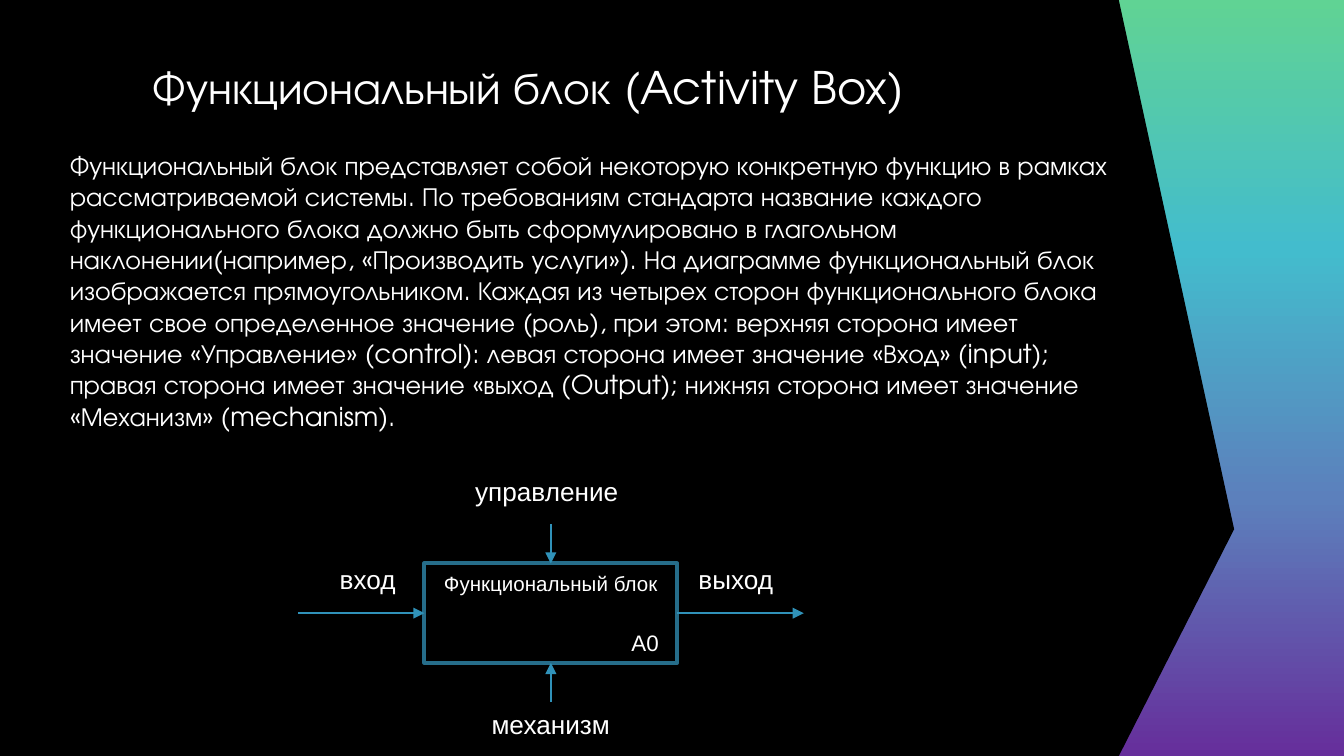
import lxml.etree
import pptx
import pptx.dml.color
import pptx.enum.dml
import pptx.enum.shapes
import pptx.enum.text
import pptx.oxml.ns
import pptx.util

Cm = pptx.util.Cm
Pt = pptx.util.Pt
RGBColor = pptx.dml.color.RGBColor
Align = pptx.enum.text.PP_ALIGN
Anchor = pptx.enum.text.MSO_ANCHOR
Shape = pptx.enum.shapes.MSO_SHAPE
qn = pptx.oxml.ns.qn

BLACK = RGBColor(0x00, 0x00, 0x00)
WHITE = RGBColor(0xFF, 0xFF, 0xFF)
ARROW_BLUE = RGBColor(0x30, 0x92, 0xB9)
BOX_BLUE = RGBColor(0x26, 0x6D, 0x8A)
GRADIENT_STOPS = (
    (0, RGBColor(0x60, 0xD3, 0x94)),
    (33, RGBColor(0x43, 0xBC, 0xCD)),
    (66, RGBColor(0x5C, 0x80, 0xBC)),
    (100, RGBColor(0x66, 0x2E, 0x9B)),
)

SLIDE_WIDTH, SLIDE_HEIGHT = 25.4, 14.29
DISPLAY_FONT = "TeX Gyre Adventor"
LABEL_FONT = "Arial"

TITLE = "Функциональный блок (Activity Box)"
BODY = (
    "Функциональный блок представляет собой некоторую конкретную функцию в рамках "
    "рассматриваемой системы. По требованиям стандарта название каждого "
    "функционального блока должно быть сформулировано в глагольном "
    "наклонении(например, «Производить услуги»). На диаграмме функциональный блок "
    "изображается прямоугольником. Каждая из четырех сторон функционального блока "
    "имеет свое определенное значение (роль), при этом: верхняя сторона имеет "
    "значение «Управление» (control): левая сторона имеет значение «Вход» (input); "
    "правая сторона имеет значение «выход (Output); нижняя сторона имеет значение "
    "«Механизм» (mechanism)."
)


def write_paragraph(paragraph, text, *, size, font=LABEL_FONT, align=Align.LEFT, before=0):
    """Fill a paragraph with white text in the given format."""
    paragraph.alignment = align
    if before:
        paragraph.space_before = Pt(before)
    run = paragraph.add_run()
    run.text = text
    run.font.name = font
    run.font.size = Pt(size)
    run.font.color.rgb = WHITE


def add_text(slide, text, box, *, anchor=Anchor.TOP, inset=0.13, **text_format):
    """Add a wrapping text box at left, top, width, height in centimetres."""
    frame = slide.shapes.add_textbox(*map(Cm, box)).text_frame
    frame.word_wrap = True
    frame.vertical_anchor = anchor
    frame.margin_left = frame.margin_right = Cm(0.25)
    frame.margin_top = frame.margin_bottom = Cm(inset)
    write_paragraph(frame.paragraphs[0], text, **text_format)


def add_arrow(slide, start, end):
    """Add a thin arrow that points at its end."""
    arrow = slide.shapes.add_connector(
        pptx.enum.shapes.MSO_CONNECTOR.STRAIGHT, *map(Cm, (*start, *end))
    )
    arrow.line.color.rgb = ARROW_BLUE
    arrow.line.width = Pt(0.75)
    properties = arrow.element.spPr
    line = properties.find(qn("a:ln"))
    lxml.etree.SubElement(line, qn("a:tailEnd"), type="triangle")
    lxml.etree.SubElement(properties, qn("a:effectLst"))


def add_gradient_edge(slide, left, top, width, height):
    """Draw the gradient band and the black wedge that cuts into it."""
    band = slide.shapes.add_shape(Shape.RECTANGLE, *map(Cm, (left, top, width, height)))
    band.shadow.inherit = False
    band.line.fill.background()
    band.fill.gradient()
    band.fill.gradient_angle = 270
    stops = band.element.spPr.find(qn("a:gradFill")).find(qn("a:gsLst"))
    for stop in list(stops):
        stops.remove(stop)
    for percent, color in GRADIENT_STOPS:
        stop = lxml.etree.SubElement(stops, qn("a:gs"), pos=str(percent * 1000))
        lxml.etree.SubElement(stop, qn("a:srgbClr"), val=str(color))

    depth = 2.18
    wedge = slide.shapes.add_shape(
        Shape.ISOSCELES_TRIANGLE,
        Cm(left + (depth - height) / 2),
        Cm(top + (height - depth) / 2),
        Cm(height),
        Cm(depth),
    )
    wedge.rotation = 90
    wedge.adjustments[0] = 0.7
    wedge.shadow.inherit = False
    wedge.fill.solid()
    wedge.fill.fore_color.rgb = BLACK
    wedge.line.color.rgb = BLACK
    wedge.line.width = Pt(0.75)


def add_activity_diagram(slide, left, top, width, height):
    """Draw the activity box with its four labelled arrows."""
    block = slide.shapes.add_shape(Shape.RECTANGLE, *map(Cm, (left, top, width, height)))
    block.shadow.inherit = False
    block.fill.background()
    block.line.color.rgb = BOX_BLUE
    block.line.width = Pt(2)
    frame = block.text_frame
    frame.word_wrap = True
    frame.vertical_anchor = Anchor.MIDDLE
    frame.margin_left = frame.margin_right = Cm(0.35)
    write_paragraph(frame.paragraphs[0], "Функциональный блок", size=11, align=Align.CENTER)
    write_paragraph(frame.add_paragraph(), "А0", size=12, align=Align.RIGHT, before=18)

    right, bottom = left + width, top + height
    center, middle = left + width / 2, top + height / 2
    across, down = width / 2, 0.74
    add_arrow(slide, (left - across, middle), (left, middle))
    add_arrow(slide, (right, middle), (right + across, middle))
    add_arrow(slide, (center, top - down), (center, top))
    add_arrow(slide, (center, bottom + down), (center, bottom))

    labels = (
        ("управление", left + 0.71, top - 1.8),
        ("механизм", left + 1.02, bottom + down),
        ("выход", right + 0.15, top - 0.13),
        ("вход", left - 1.85, top - 0.13),
    )
    for text, label_left, label_top in labels:
        add_text(slide, text, (label_left, label_top, 4.47, 0.86), size=14)


def main():
    """Build the slide and save it."""
    presentation = pptx.Presentation()
    presentation.slide_width = Cm(SLIDE_WIDTH)
    presentation.slide_height = Cm(SLIDE_HEIGHT)
    slide = presentation.slides.add_slide(presentation.slide_layouts[6])
    slide.background.fill.solid()
    slide.background.fill.fore_color.rgb = BLACK

    add_gradient_edge(slide, 21.13, 0, SLIDE_WIDTH - 21.13, SLIDE_HEIGHT)
    display = {"font": DISPLAY_FONT, "anchor": Anchor.MIDDLE, "inset": 0.25}
    add_text(slide, TITLE, (2.64, 0, 22.76, 3.28), size=24, **display)
    add_text(slide, BODY, (1.07, 2.11, 20.45, 6.76), size=14, **display)
    add_activity_diagram(slide, 8.02, 10.65, 4.78, 1.88)
    presentation.save("out.pptx")


if __name__ == "__main__":
    main()
